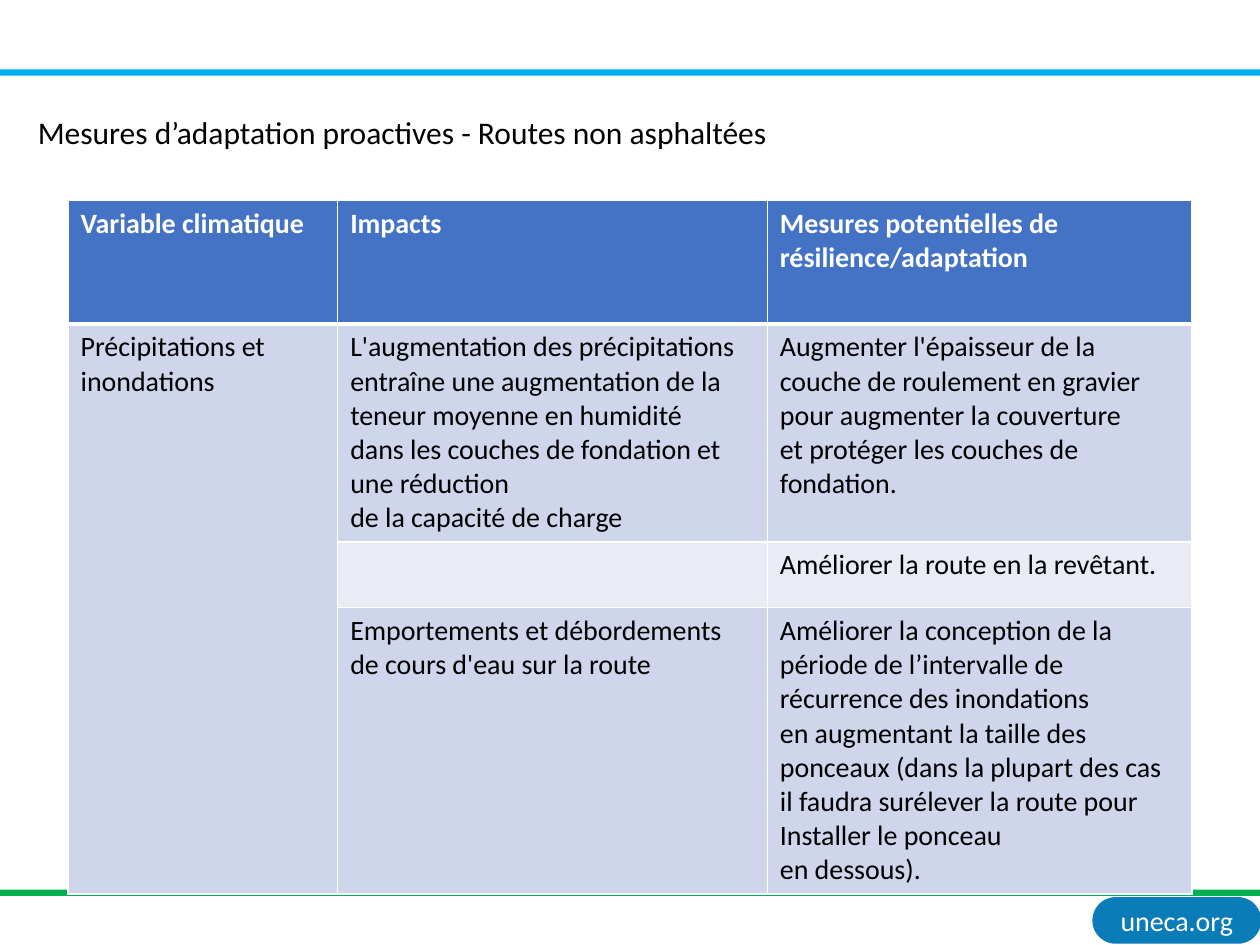
from lxml import etree
from pptx import Presentation
from pptx.dml.color import RGBColor
from pptx.enum.shapes import MSO_SHAPE
from pptx.enum.text import MSO_ANCHOR, MSO_AUTO_SIZE, PP_ALIGN
from pptx.oxml.ns import qn
from pptx.util import Inches, Pt

RECTANGLE, ROUNDED = MSO_SHAPE.RECTANGLE, MSO_SHAPE.ROUNDED_RECTANGLE
LEFT, CENTER = PP_ALIGN.LEFT, PP_ALIGN.CENTER
TOP, MIDDLE = MSO_ANCHOR.TOP, MSO_ANCHOR.MIDDLE
NO_AUTOFIT = MSO_AUTO_SIZE.NONE

WHITE, BLACK = "FFFFFF", "000000"
HEADER_FILL = "4472C4"
BAND_FILLS = ["E9EBF5", "CFD5EA"]


def paint(fill, color):
    fill.solid()
    fill.fore_color.rgb = RGBColor.from_string(color)


def write(paragraph, text, size, color, bold=False, align=LEFT):
    paragraph.alignment = align
    run = paragraph.add_run()
    run.text = text
    run.font.name = "Calibri"
    run.font.size = Pt(size)
    run.font.bold = bold
    paint(run.font.fill, color)


prs = Presentation()
prs.slide_width, prs.slide_height = Inches(10), Inches(7.5)
slide = prs.slides.add_slide(prs.slide_layouts[5])

# Address badge and the two page rules
page_parts = [
    (ROUNDED, 8.67, 7.12, 1.34, 0.37, "0A7CB8"),
    (RECTANGLE, 0, 0.55, 10, 0.05, "00B0F0"),
    (RECTANGLE, 0, 7.06, 10, 0.05, "00B050"),
]
drawn = []
for kind, left, top, width, height, color in page_parts:
    part = slide.shapes.add_shape(
        kind, Inches(left), Inches(top), Inches(width), Inches(height))
    part.shadow.inherit = False
    part.line.fill.background()
    paint(part.fill, color)
    drawn.append(part)

badge = drawn[0]
badge.adjustments[0] = 0.5
address = badge.text_frame
address.margin_left = address.margin_right = Inches(0.05)
address.margin_top = address.margin_bottom = Inches(0.05)
address.vertical_anchor = MIDDLE
write(address.paragraphs[0], "uneca.org", 16, WHITE, align=CENTER)

# Title
title = slide.shapes.title
title.left, title.top = Inches(0.2), Inches(0.85)
title.width, title.height = Inches(6.06), Inches(0.4)
heading = title.text_frame
heading.auto_size = NO_AUTOFIT
heading.word_wrap = False
heading.vertical_anchor = TOP
write(heading.paragraphs[0],
      "Mesures d’adaptation proactives - Routes non asphaltées", 18, BLACK)

# Table of measures: each cell is a list of paragraphs
measures = [
    [["Variable climatique"], ["Impacts"],
     ["Mesures potentielles de résilience/adaptation"]],
    [["Précipitations et inondations"],
     ["L'augmentation des précipitations entraîne une augmentation de la "
      "teneur moyenne en humidité",
      "dans les couches de fondation et une réduction",
      "de la capacité de charge"],
     ["Augmenter l'épaisseur de la couche de roulement en gravier",
      "pour augmenter la couverture",
      "et protéger les couches de fondation."]],
    [[], [], ["Améliorer la route en la revêtant."]],
    [[],
     ["Emportements et débordements de cours d'eau sur la route"],
     ["Améliorer la conception de la période de l’intervalle de récurrence "
      "des inondations",
      "en augmentant la taille des",
      "ponceaux (dans la plupart des cas",
      "il faudra surélever la route pour",
      "Installer le ponceau",
      "en dessous)."]],
]
column_widths = [2.14, 3.41, 3.37]
row_heights = [0.98, 1.7, 0.52, 2.23]

table = slide.shapes.add_table(
    len(row_heights), len(column_widths), Inches(0.54), Inches(1.59),
    Inches(sum(column_widths)), Inches(sum(row_heights))).table
for column, width in zip(table.columns, column_widths):
    column.width = Inches(width)
for row, height in zip(table.rows, row_heights):
    row.height = Inches(height)
table.cell(1, 0).merge(table.cell(3, 0))

for r, row in enumerate(measures):
    for c, lines in enumerate(row):
        cell = table.cell(r, c)
        band = BAND_FILLS[1] if c == 0 else BAND_FILLS[r % 2]
        paint(cell.fill, band if r else HEADER_FILL)
        for i, line in enumerate(lines):
            frame = cell.text_frame
            paragraph = frame.add_paragraph() if i else frame.paragraphs[0]
            write(paragraph, line, 16, BLACK if r else WHITE, bold=r == 0)

        # White borders, thicker under the header
        weights = {"lnL": 1, "lnR": 1, "lnT": 3 if r == 1 else 1,
                   "lnB": 3 if r == 0 else 1}
        properties = cell._tc.get_or_add_tcPr()
        for position, (side, weight) in enumerate(weights.items()):
            border = etree.Element(qn(f"a:{side}"), w=str(Pt(weight)))
            solid = etree.SubElement(border, qn("a:solidFill"))
            etree.SubElement(solid, qn("a:srgbClr"), val=WHITE)
            properties.insert(position, border)

prs.save("out.pptx")
